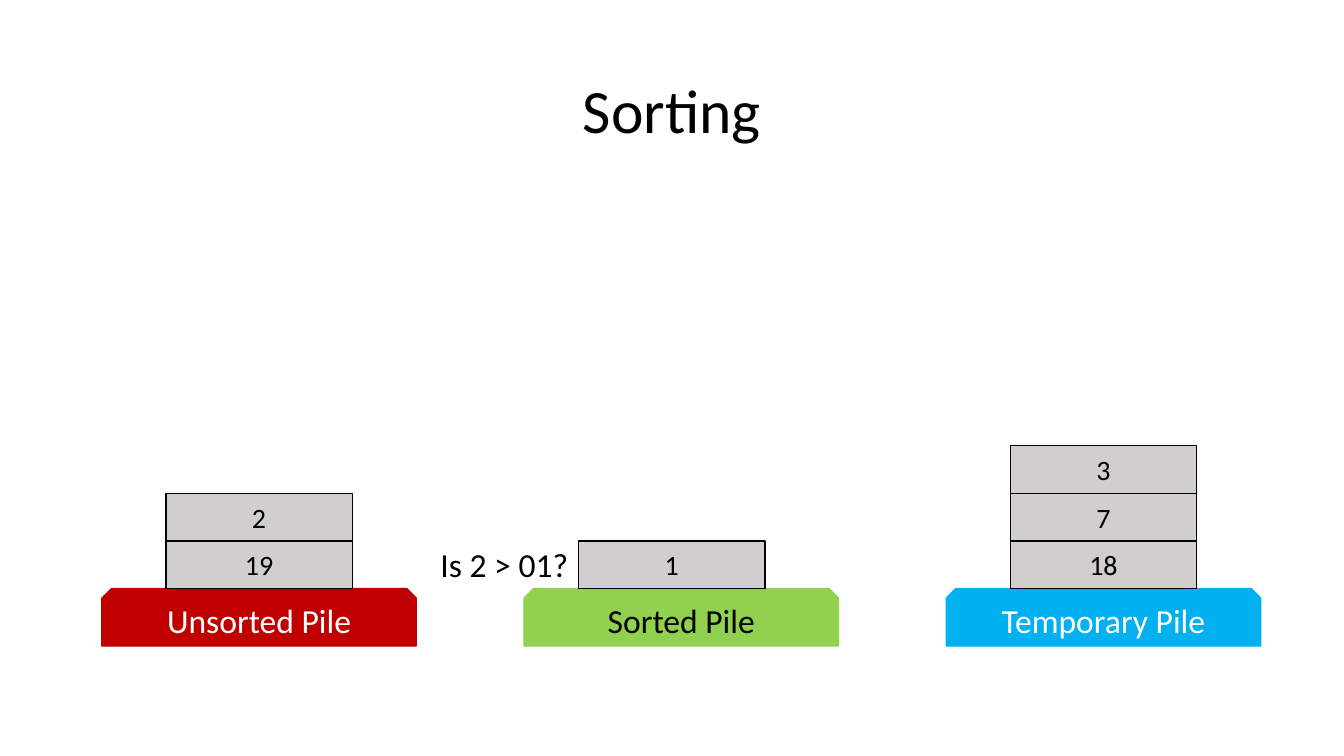
from pptx import Presentation
from pptx import util as u
from pptx.dml.color import RGBColor
from pptx.enum import shapes, text

TITLE = "Sorting"
QUESTION = "Is 2 > 01?"
PILES = [
    {"label": "Unsorted Pile", "fill": "C00000", "ink": "FFFFFF", "cards": ["19", "2"], "shift": 0},
    {"label": "Sorted Pile", "fill": "92D050", "ink": "000000", "cards": ["1"], "shift": -0.24},
    {"label": "Temporary Pile", "fill": "00B0F0", "ink": "FFFFFF", "cards": ["18", "7", "3"], "shift": 0},
]
FONT = "Calibri"
BLACK, CARD_FILL = "000000", "D0CECE"

BASE_LEFT, BASE_TOP, BASE_W, BASE_H = 2.57, 14.83, 7.92, 1.45
PILE_PITCH = 10.64
CARD_W, CARD_H = 4.7, 1.2

deck = Presentation()
deck.slide_width, deck.slide_height = u.Cm(33.87), u.Cm(19.05)
slide = deck.slides.add_slide(deck.slide_layouts[6])


def colour(hex_code):
    return RGBColor.from_string(hex_code)


def write(holder, words, size, ink, align=text.PP_ALIGN.CENTER, wrap=True):
    frame = holder.text_frame
    frame.text = words
    frame.word_wrap = wrap
    frame.vertical_anchor = text.MSO_ANCHOR.MIDDLE
    line = frame.paragraphs[0]
    line.alignment = align
    font = line.runs[0].font
    font.name, font.size = FONT, u.Pt(size)
    font.color.rgb = colour(ink)
    return frame


def add_block(kind, box, words, size, fill, outline, ink):
    block = slide.shapes.add_shape(kind, *map(u.Cm, box))
    block.shadow.inherit = False
    block.fill.solid()
    block.fill.fore_color.rgb = colour(fill)
    block.line.color.rgb = colour(outline)
    block.line.width = u.Pt(1)
    write(block, words, size, ink)


def add_words(box, *style, **layout):
    return write(slide.shapes.add_textbox(*map(u.Cm, box)), *style, **layout)


title = add_words((2.33, 1.01, 29.21, 3.68), TITLE, 44, BLACK)
title.paragraphs[0].line_spacing = 0.9

for column, pile in enumerate(PILES):
    left = BASE_LEFT + column * PILE_PITCH
    add_block(shapes.MSO_SHAPE.SNIP_2_SAME_RECTANGLE, (left, BASE_TOP, BASE_W, BASE_H),
              pile["label"], 24, pile["fill"], pile["fill"], pile["ink"])
    card_left = left + (BASE_W - CARD_W) / 2 + pile["shift"]
    for level, card in enumerate(pile["cards"], start=1):
        add_block(shapes.MSO_SHAPE.RECTANGLE,
                  (card_left, BASE_TOP - level * CARD_H, CARD_W, CARD_H),
                  card, 20, CARD_FILL, BLACK, BLACK)

question = add_words((10.85, 13.59, 3.76, 1.27), QUESTION, 24, BLACK,
                     align=text.PP_ALIGN.LEFT, wrap=False)
question.auto_size = text.MSO_AUTO_SIZE.SHAPE_TO_FIT_TEXT

deck.save("out.pptx")
